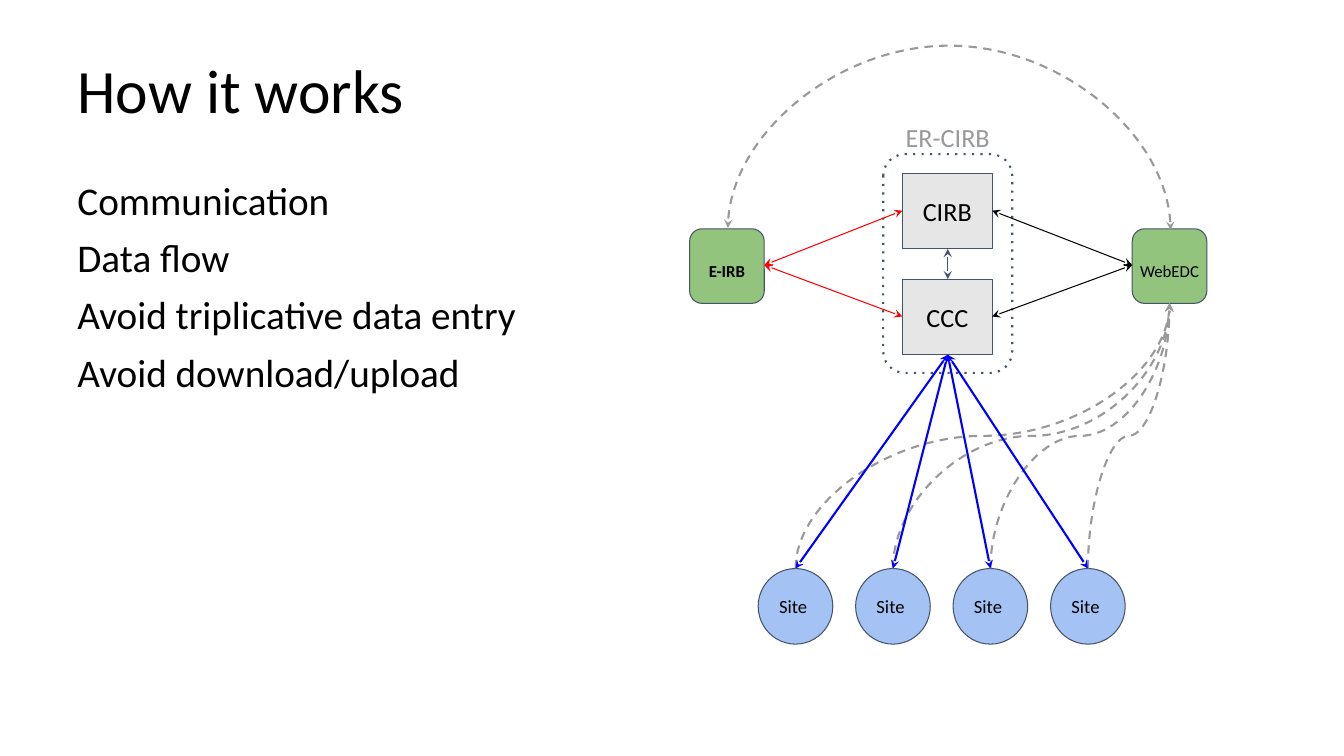
import pptx
import pptx.util
import pptx.dml.color
import pptx.enum.dml
import pptx.enum.shapes
import pptx.enum.text
import pptx.oxml.ns
from lxml import etree

SHAPE = pptx.enum.shapes.MSO_SHAPE
CONNECTOR = pptx.enum.shapes.MSO_CONNECTOR
ANCHOR = pptx.enum.text.MSO_ANCHOR
ALIGN = pptx.enum.text.PP_ALIGN
qn = pptx.oxml.ns.qn

COLUMNS, ROWS = 13.33, 7.5  # grid cells are one inch square
BLACK, GREY, SLATE = "000000", "999999", "44546A"
BLUE, RED = "0000FF", "FF0000"
PALE_GREY, PALE_BLUE, GREEN = "E7E6E6", "A4C2F4", "93C47D"


def grid(cells):
    return pptx.util.Inches(cells)


def color(hex_string):
    return pptx.dml.color.RGBColor.from_string(hex_string)


class Diagram:
    """Holds the slide and its style, and adds each kind of element."""

    font_name = "Calibri"

    def __init__(self, slide):
        self.slide = slide

    def fill_text(self, shape, lines, size, ink=BLACK, align=ALIGN.LEFT, bold=False,
                  anchor=ANCHOR.MIDDLE, insets=(0.1, 0.1), spacing=1.0, before=0):
        frame = shape.text_frame
        frame.word_wrap = True
        frame.vertical_anchor = anchor
        frame.margin_left = frame.margin_right = grid(insets[0])
        frame.margin_top = frame.margin_bottom = grid(insets[1])
        frame.text = "\n".join(lines)
        for index, paragraph in enumerate(frame.paragraphs):
            paragraph.alignment = align
            paragraph.line_spacing = spacing
            if index:
                paragraph.space_before = pptx.util.Pt(before)
            for run in paragraph.runs:
                run.font.name = self.font_name
                run.font.size = pptx.util.Pt(size)
                run.font.bold = bold
                run.font.color.rgb = color(ink)

    def text(self, box, lines, size, **style):
        shape = self.slide.shapes.add_textbox(*map(grid, box))
        self.fill_text(shape, lines, size, **style)

    def outline(self, shape, ink, width, dash=None):
        shape.line.color.rgb = color(ink)
        shape.line.width = pptx.util.Pt(width)
        if dash:
            shape.line.dash_style = pptx.enum.dml.MSO_LINE.DASH
            shape._element.spPr.find(".//" + qn("a:prstDash")).set("val", dash)

    def node(self, kind, box, fill=None, width=0.75, dash=None):
        shape = self.slide.shapes.add_shape(kind, *map(grid, box))
        shape.shadow.inherit = False
        if fill:
            shape.fill.solid()
            shape.fill.fore_color.rgb = color(fill)
        else:
            shape.fill.background()
        self.outline(shape, SLATE, width, dash)
        return shape

    def arrow(self, start, end, ink, width, kind=CONNECTOR.STRAIGHT,
              dash=None, both=True):
        connector = self.slide.shapes.add_connector(
            kind, *map(grid, (*start, *end)))
        self.outline(connector, ink, width, dash)
        properties = connector._element.spPr
        line = properties.find(qn("a:ln"))
        for name in ("a:headEnd", "a:tailEnd") if both else ("a:tailEnd",):
            etree.SubElement(line, qn(name), type="stealth")
        etree.SubElement(properties, qn("a:effectLst"))
        return connector

    def upright_arrow(self, start, end, ink, width, kind, bend=0.5, **style):
        """A bent or curved arrow that leaves and arrives vertically."""
        (x1, y1), (x2, y2) = start, end
        length, spread = abs(y2 - y1), abs(x2 - x1)
        left, top = (x1 + x2 - length) / 2, (y1 + y2 - spread) / 2
        connector = self.arrow((left, top), (left + length, top + spread),
                               ink, width, kind, **style)
        properties = connector._element.spPr
        transform = properties.find(qn("a:xfrm"))
        transform.set("rot", str(90 * 60000))
        transform.set("flipH", str(int(y2 < y1)))
        transform.set("flipV", str(int(x2 > x1)))
        guides = properties.find(qn("a:prstGeom")).find(qn("a:avLst"))
        etree.SubElement(guides, qn("a:gd"), name="adj1",
                         fmla=f"val {round(bend * 100000)}")


def main():
    presentation = pptx.Presentation()
    presentation.slide_width = grid(COLUMNS)
    presentation.slide_height = grid(ROWS)
    diagram = Diagram(presentation.slides.add_slide(presentation.slide_layouts[6]))

    # Title and points
    diagram.text((0.67, 0.3, 12, 1.25), ["How it works"], 44,
                 insets=(0.1, 0.05), spacing=0.9)
    diagram.text((0.67, 1.75, 12, 4.95),
                 ["Communication", "Data flow", "Avoid triplicative data entry",
                  "Avoid download/upload"],
                 28, anchor=ANCHOR.TOP, insets=(0.1, 0.05), spacing=0.9, before=10.7)

    # Sites
    site_size, site_top = 0.74, 5.64
    site_lefts = [7.52 + index * 2.9 / 3 for index in range(4)]
    for left in site_lefts:
        site = diagram.node(SHAPE.OVAL, (left, site_top, site_size, 0.75), PALE_BLUE)
        diagram.fill_text(site, ["Site"], 13.3)
    site_points = [(left + site_size / 2, site_top) for left in site_lefts]

    # Central group
    diagram.node(SHAPE.ROUNDED_RECTANGLE, (8.76, 1.53, 1.28, 2.17),
                 width=1.5, dash="dot")
    for label, top in (("CCC", 2.77), ("CIRB", 1.72)):
        board = diagram.node(SHAPE.RECTANGLE, (8.95, top, 0.89, 0.75), PALE_GREY)
        diagram.fill_text(board, [label], 18.7, align=ALIGN.CENTER)
    diagram.upright_arrow((9.4, 2.47), (9.4, 2.77), SLATE, 0.75, CONNECTOR.ELBOW)
    diagram.text((8.76, 1.21, 1.28, 0.3), ["ER-CIRB"], 18.7,
                 ink=GREY, align=ALIGN.CENTER)

    # Outer systems
    for label, left, inset, bold in (("WebEDC", 11.23, 0, False),
                                     ("E-IRB", 6.84, 0.1, True)):
        system = diagram.node(SHAPE.ROUNDED_RECTANGLE, (left, 2.27, 0.74, 0.74), GREEN)
        diagram.fill_text(system, [label], 12, align=ALIGN.CENTER, bold=bold,
                          insets=(inset, inset), spacing=1.5)

    # Site links
    for site_point in site_points:
        diagram.upright_arrow(site_point, (11.6, 3.01), GREY, 1.5, CONNECTOR.CURVE,
                              dash="dash", both=False)
    for site_point in site_points:
        diagram.arrow(site_point, (9.4, 3.52), BLUE, 1.5)

    # Arc between the outer systems
    diagram.upright_arrow((11.61, 2.28), (7.22, 2.26), GREY, 1.5, CONNECTOR.CURVE,
                          bend=91, dash="dash")

    # Links between the central group and the outer systems
    for board_middle in (2.09, 3.14):
        diagram.arrow((7.58, 2.63), (8.95, board_middle), RED, 0.75)
        diagram.arrow((9.84, board_middle), (11.23, 2.63), BLACK, 0.75)

    presentation.save("out.pptx")


if __name__ == "__main__":
    main()
